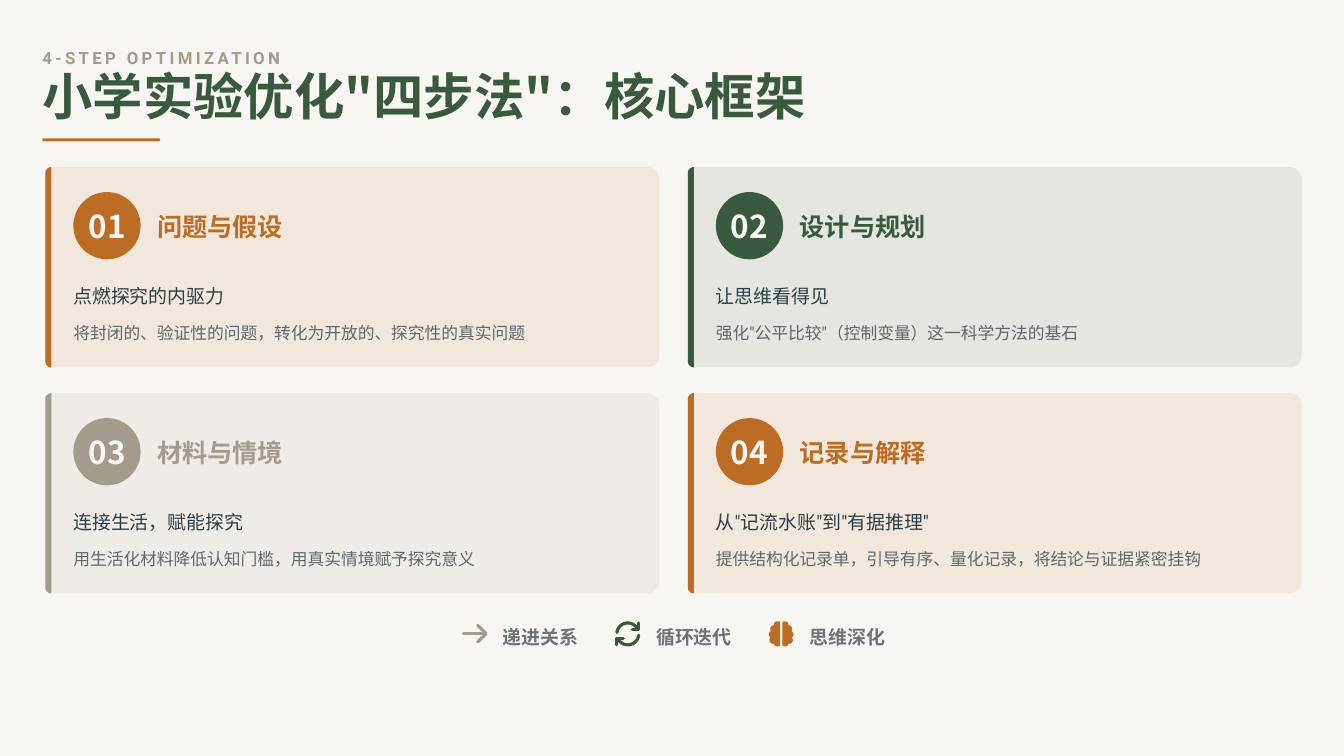
import math
from dataclasses import dataclass

import pptx
import pptx.dml.color
import pptx.enum.shapes
import pptx.enum.text
import pptx.oxml.ns
import pptx.util
from lxml import etree

Inches = pptx.util.Inches
Pt = pptx.util.Pt
SHAPES = pptx.enum.shapes.MSO_SHAPE


@dataclass(frozen=True)
class Theme:
    paper: str = "F8F6F2"
    green: str = "3A5A40"
    orange: str = "BC6C25"
    stone: str = "A39B8B"
    ink: str = "2F3E46"
    cjk: str = "Noto Sans CJK SC"
    latin: str = "Roboto"
    headline: int = 48
    number: int = 30
    heading: int = 24
    lead: int = 18
    small: int = 16


THEME = Theme()
CARD_W, CARD_H = 8.12, 2.65
CARD_LEFT, CARD_TOP = 0.6, 2.21
COLUMN_STEP, ROW_STEP = 8.5, 2.99
ICON = 0.33

STEPS = [
    ("问题与假设", THEME.orange, "点燃探究的内驱力",
     "将封闭的、验证性的问题，转化为开放的、探究性的真实问题"),
    ("设计与规划", THEME.green, "让思维看得见",
     "强化\"公平比较\"（控制变量）这一科学方法的基石"),
    ("材料与情境", THEME.stone, "连接生活，赋能探究",
     "用生活化材料降低认知门槛，用真实情境赋予探究意义"),
    ("记录与解释", THEME.orange, "从\"记流水账\"到\"有据推理\"",
     "提供结构化记录单，引导有序、量化记录，将结论与证据紧密挂钩"),
]


def set_alpha(solid_fill, percent):
    color = solid_fill[0]
    etree.SubElement(color, pptx.oxml.ns.qn("a:alpha"), val=str(percent * 1000))


def paint(shape, color, alpha=100):
    """Give a shape a plain fill without outline or shadow."""
    shape.shadow.inherit = False
    shape.fill.solid()
    shape.fill.fore_color.rgb = pptx.dml.color.RGBColor.from_string(color)
    shape.line.fill.background()
    if alpha < 100:
        set_alpha(shape._element.spPr.find(pptx.oxml.ns.qn("a:solidFill")), alpha)


def add_text(slide, box, text, size, color, font=THEME.latin, bold=False,
             spacing=None, alpha=100, tracking=0):
    frame = slide.shapes.add_textbox(*map(Inches, box)).text_frame
    frame.word_wrap = True
    frame.vertical_anchor = pptx.enum.text.MSO_ANCHOR.MIDDLE
    frame.margin_left = frame.margin_right = 0
    frame.margin_top = frame.margin_bottom = 0
    frame.text = text
    paragraph = frame.paragraphs[0]
    if spacing:
        paragraph.line_spacing = spacing
    run = paragraph.runs[0]
    run.font.size = Pt(size)
    run.font.bold = bold
    run.font.name = font
    run.font.color.rgb = pptx.dml.color.RGBColor.from_string(color)
    properties = run.font._element
    east_asian = etree.Element(pptx.oxml.ns.qn("a:ea"), typeface=THEME.cjk)
    properties.find(pptx.oxml.ns.qn("a:latin")).addnext(east_asian)
    if tracking:
        properties.set("spc", str(round(tracking * 100)))
    if alpha < 100:
        set_alpha(properties.find(pptx.oxml.ns.qn("a:solidFill")), alpha)


def arc(cx, cy, radius, start, end, count=12):
    """Points along an arc, in degrees clockwise from the right."""
    angles = [math.radians(start + (end - start) * i / count) for i in range(count + 1)]
    return [(cx + radius * math.cos(a), cy + radius * math.sin(a)) for a in angles]


def add_outline(slide, contours, close=True):
    contours = [[(Inches(x), Inches(y)) for x, y in points] for points in contours]
    builder = slide.shapes.build_freeform(*contours[0][0])
    for i, points in enumerate(contours):
        if i:
            builder.move_to(*points[0])
        builder.add_line_segments(points[1:], close=close)
    return builder.convert_to_shape()


def add_panel(slide, left, top, width, right_radius, color, alpha=100):
    """Card-high panel whose left and right corners differ in radius."""
    r, q = 0.08, right_radius
    right, bottom = left + width, top + CARD_H
    points = arc(left + r, bottom - r, r, 90, 180) + arc(left + r, top + r, r, 180, 270)
    if q:
        points += arc(right - q, top + q, q, 270, 360) + arc(right - q, bottom - q, q, 0, 90)
    else:
        points += [(right, top), (right, bottom)]
    paint(add_outline(slide, [points]), color, alpha)


def add_step(slide, index, heading, color, lead, detail):
    row, column = divmod(index, 2)
    left = CARD_LEFT + column * COLUMN_STEP
    top = CARD_TOP + row * ROW_STEP
    inner = left + 0.37
    add_panel(slide, left, top, CARD_W, 0.16, color, alpha=10)
    add_panel(slide, left, top, 0.08, 0, color)
    badge = slide.shapes.add_shape(
        SHAPES.OVAL, Inches(inner), Inches(top + 0.33), Inches(0.89), Inches(0.89))
    paint(badge, color)
    add_text(slide, (inner + 0.2, top + 0.53, 0.69, 0.5), f"{index + 1:02}",
             THEME.number, THEME.paper, THEME.cjk, bold=True)
    add_text(slide, (inner + 1.11, top + 0.55, 1.83, 0.44), heading,
             THEME.heading, color, THEME.cjk, bold=True, spacing=1.1)
    add_text(slide, (inner, top + 1.44, 7.54, 0.4), lead,
             THEME.lead, THEME.ink, spacing=1.4)
    add_text(slide, (inner, top + 1.96, 7.53, 0.36), detail,
             THEME.small, THEME.ink, spacing=1.4, alpha=75)


def add_stroke_icon(slide, contours, color):
    icon = add_outline(slide, contours, close=False)
    icon.shadow.inherit = False
    icon.fill.background()
    icon.line.color.rgb = pptx.dml.color.RGBColor.from_string(color)
    icon.line.width = Pt(3)
    line = icon.line._get_or_add_ln()
    line.set("cap", "rnd")
    etree.SubElement(line, pptx.oxml.ns.qn("a:round"))


def add_arrow_icon(slide, x, y, color):
    shaft = [(x + 0.02, y + 0.16), (x + 0.31, y + 0.16)]
    head = [(x + 0.21, y + 0.05), (x + 0.32, y + 0.16), (x + 0.21, y + 0.27)]
    add_stroke_icon(slide, [shaft, head], color)


def add_cycle_icon(slide, x, y, color):
    cx, cy = x + ICON / 2, y + ICON / 2
    sweep = arc(cx, cy, 0.145, 187, 315) + [(cx + 0.14, cy - 0.07)]
    head = [(cx + 0.145, cy - 0.145), (cx + 0.145, cy - 0.06), (cx + 0.06, cy - 0.06)]
    half = [sweep, head]
    turned = [[(2 * cx - px, 2 * cy - py) for px, py in points] for points in half]
    add_stroke_icon(slide, half + turned, color)


def add_brain_icon(slide, x, y, color):
    """Two mirrored halves, drawn on a grid of hundredths of an inch."""
    lobes = [(7, 3), (7.6, 1.3), (9, 0.3), (11, 0), (13, 0), (14.5, 0.5), (15, 2),
             (15, 31), (14.5, 32.5), (13, 33), (11, 33), (9, 32.6), (7.6, 31.5),
             (7, 30), (4, 29.3), (1.8, 27.5), (1, 25), (1.3, 23), (2, 21),
             (0.6, 19.4), (0, 17), (0.8, 14.7), (3, 13), (2.2, 11.7), (2, 10),
             (2.7, 7.3), (4.4, 5.6), (7, 5)]
    left = [(x + px / 100, y + py / 100) for px, py in lobes]
    right = [(2 * x + ICON - px, py) for px, py in left]
    paint(add_outline(slide, [left, right]), color)


def add_legend(slide):
    entries = [("递进关系", add_arrow_icon, THEME.stone),
               ("循环迭代", add_cycle_icon, THEME.green),
               ("思维深化", add_brain_icon, THEME.orange)]
    for i, (label, draw_icon, color) in enumerate(entries):
        left = 6.11 + i * 2.03
        draw_icon(slide, left, 8.22, color)
        add_text(slide, (left + 0.54, 8.19, 1.12, 0.39), label, THEME.lead,
                 THEME.ink, bold=True, spacing=1.3, alpha=70)


def add_header(slide):
    add_text(slide, (0.56, 0.56, 16.78, 0.33), "4-STEP OPTIMIZATION", THEME.small,
             THEME.stone, bold=True, spacing=1.3, tracking=3.2)
    add_text(slide, (0.56, 1, 17, 0.67), "小学实验优化\"四步法\"：核心框架", THEME.headline,
             THEME.green, THEME.cjk, bold=True, spacing=0.8)
    underline = slide.shapes.add_shape(
        SHAPES.ROUNDED_RECTANGLE, Inches(0.56), Inches(1.83), Inches(1.56), Inches(0.04))
    underline.adjustments[0] = 0.5
    paint(underline, THEME.orange)


def main():
    deck = pptx.Presentation()
    deck.slide_width, deck.slide_height = Inches(17.78), Inches(10)
    slide = deck.slides.add_slide(deck.slide_layouts[6])
    slide.background.fill.solid()
    slide.background.fill.fore_color.rgb = pptx.dml.color.RGBColor.from_string(THEME.paper)
    add_header(slide)
    for index, step in enumerate(STEPS):
        add_step(slide, index, *step)
    add_legend(slide)
    deck.save("out.pptx")


if __name__ == "__main__":
    main()
